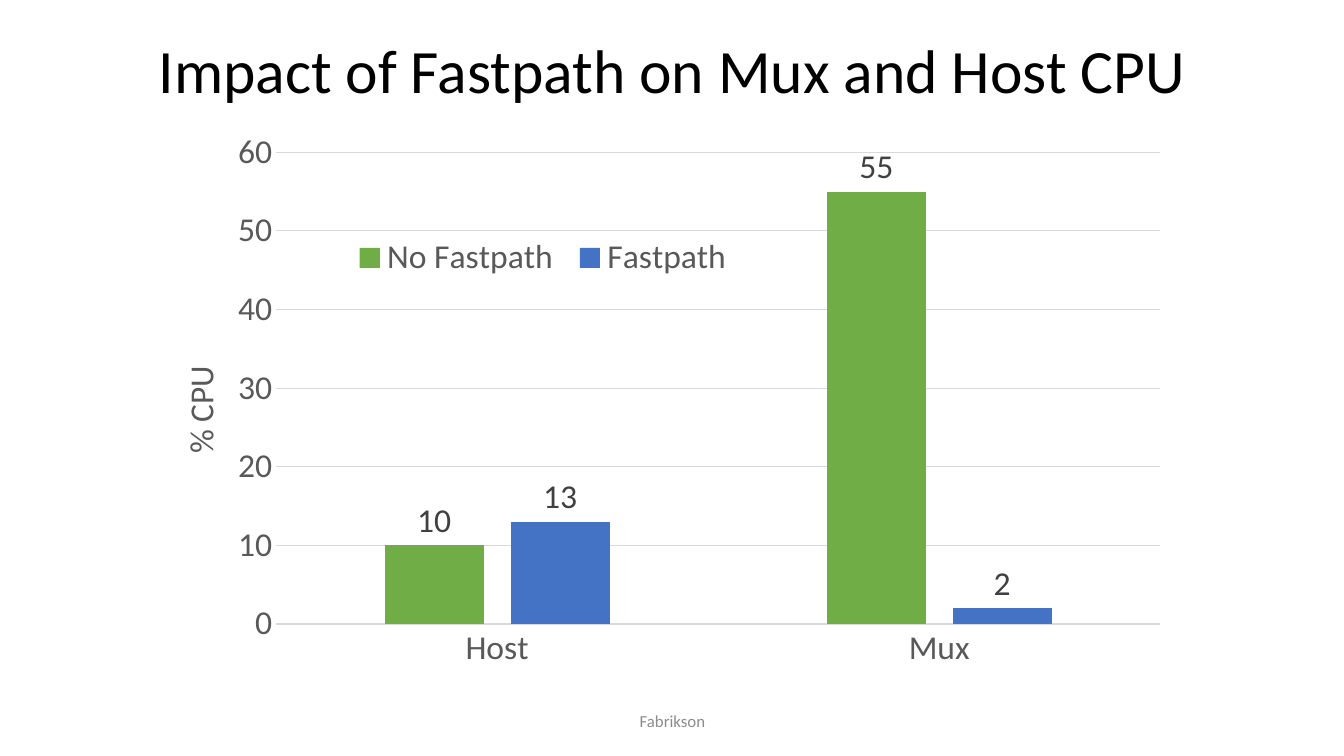
from lxml.etree import SubElement
from pptx import Presentation
from pptx.chart.data import CategoryChartData
from pptx.dml.color import RGBColor
from pptx.enum.chart import XL_CHART_TYPE, XL_LABEL_POSITION, XL_LEGEND_POSITION, XL_TICK_MARK
from pptx.enum.text import MSO_ANCHOR, MSO_AUTO_SIZE, PP_ALIGN
from pptx.oxml.ns import qn
from pptx.util import Inches, Pt

TITLE = "Impact of Fastpath on Mux and Host CPU"
FOOTER = "Fabrikson"
AXIS_TITLE = "% CPU"
CATEGORIES = ["Host", "Mux"]
SERIES = {"No Fastpath": (10, 55), "Fastpath": (13, 2)}
BOXES = {
    "title": (0.92, 0, 11.5, 1.45),
    "chart": (1.17, 1.31, 10.67, 5.87),
    "footer": (4.42, 6.95, 4.5, 0.4),
}
LAYOUTS = {
    "plot": {"layoutTarget": "inner", "xMode": "edge", "yMode": "edge",
             "x": 0.147, "y": 0.025, "w": 0.822, "h": 0.805},
    "legend": {"xMode": "edge", "yMode": "edge", "x": 0.21, "y": 0.16, "w": 0.37, "h": 0.09},
    "axis title": {"xMode": "edge", "yMode": "edge", "x": 0.05, "y": 0.38},
}
THEME = {
    "font": "Calibri", "title": "000000", "axis": "595959", "label": "404040",
    "grid": "D9D9D9", "footer": "8C8C8C", "series": ["70AD47", "4472C4"],
    "title size": 44, "chart size": 24, "footer size": 12,
}


def rgb(value):
    """Turn a hex string into a colour."""
    return RGBColor.from_string(value)


def set_font(font, size, color):
    """Apply the theme font in one size and colour."""
    for name, value in {"name": THEME["font"], "size": Pt(THEME[size]), "bold": False}.items():
        setattr(font, name, value)
    font.color.rgb = rgb(THEME[color])


def set_text(shape, text, size, color, spacing):
    """Write one centred paragraph."""
    tf = shape.text_frame
    frame = {"word_wrap": True, "auto_size": MSO_AUTO_SIZE.NONE, "vertical_anchor": MSO_ANCHOR.MIDDLE}
    for name, value in frame.items():
        setattr(tf, name, value)
    p = tf.paragraphs[0]
    p.alignment, p.line_spacing = PP_ALIGN.CENTER, spacing
    r = p.add_run()
    r.text = text
    set_font(r.font, size, color)


def set_layout(parent, values, index):
    """Give a chart part a manual layout."""
    for old in parent.findall(qn("c:layout")):
        parent.remove(old)
    layout = SubElement(parent, qn("c:layout"))
    manual = SubElement(layout, qn("c:manualLayout"))
    for name, value in values.items():
        SubElement(manual, qn("c:" + name)).set("val", str(value))
    parent.insert(index, layout)


def set_line(line):
    """Draw a thin grid line."""
    line.color.rgb = rgb(THEME["grid"])
    line.width = Pt(0.75)


def add_cpu_chart(s):
    """Add the clustered columns with axes, labels and legend."""
    data = CategoryChartData()
    data.categories = CATEGORIES
    for name, values in SERIES.items():
        data.add_series(name, values)
    box = map(Inches, BOXES["chart"])
    chart = s.shapes.add_chart(XL_CHART_TYPE.COLUMN_CLUSTERED, *box, data).chart
    chart.has_title = False
    set_font(chart.font, "chart size", "axis")

    plot = chart.plots[0]
    for name, value in {"gap_width": 219, "overlap": -27, "vary_by_categories": False}.items():
        setattr(plot, name, value)
    for ser, color in zip(plot.series, THEME["series"]):
        ser.format.fill.solid()
        ser.format.fill.fore_color.rgb = rgb(color)
        labels = ser.data_labels
        labels.show_value, labels.position = True, XL_LABEL_POSITION.OUTSIDE_END
        set_font(labels.font, "chart size", "label")

    cat, val = chart.category_axis, chart.value_axis
    for axis in (cat, val):
        axis.major_tick_mark = axis.minor_tick_mark = XL_TICK_MARK.NONE
        set_font(axis.tick_labels.font, "chart size", "axis")
    set_line(cat.format.line)
    set_line(val.major_gridlines.format.line)
    val.format.line.fill.background()
    for name, value in {"minimum_scale": 0, "maximum_scale": 60, "major_unit": 10}.items():
        setattr(val, name, value)

    tf = val.axis_title.text_frame
    r = tf.paragraphs[0].add_run()
    r.text = AXIS_TITLE
    set_font(r.font, "chart size", "axis")
    tf._txBody.bodyPr.set("rot", "-5400000")
    tf._txBody.bodyPr.set("vert", "horz")

    chart.has_legend = True
    legend = chart.legend
    legend.position, legend.include_in_layout = XL_LEGEND_POSITION.BOTTOM, False
    set_font(legend.font, "chart size", "axis")

    set_layout(chart._chartSpace.chart.plotArea, LAYOUTS["plot"], 0)
    set_layout(legend._element, LAYOUTS["legend"], 1)
    set_layout(val.axis_title._element, LAYOUTS["axis title"], 1)


def main():
    """Build and save the slide."""
    prs = Presentation()
    prs.slide_width, prs.slide_height = Inches(13.33), Inches(7.5)
    s = prs.slides.add_slide(prs.slide_layouts[5])
    title = s.shapes.title
    for name, value in zip(("left", "top", "width", "height"), BOXES["title"]):
        setattr(title, name, Inches(value))
    set_text(title, TITLE, "title size", "title", 0.9)
    add_cpu_chart(s)
    footer = s.shapes.add_textbox(*map(Inches, BOXES["footer"]))
    set_text(footer, FOOTER, "footer size", "footer", 1.0)
    prs.save("out.pptx")


if __name__ == "__main__":
    main()
